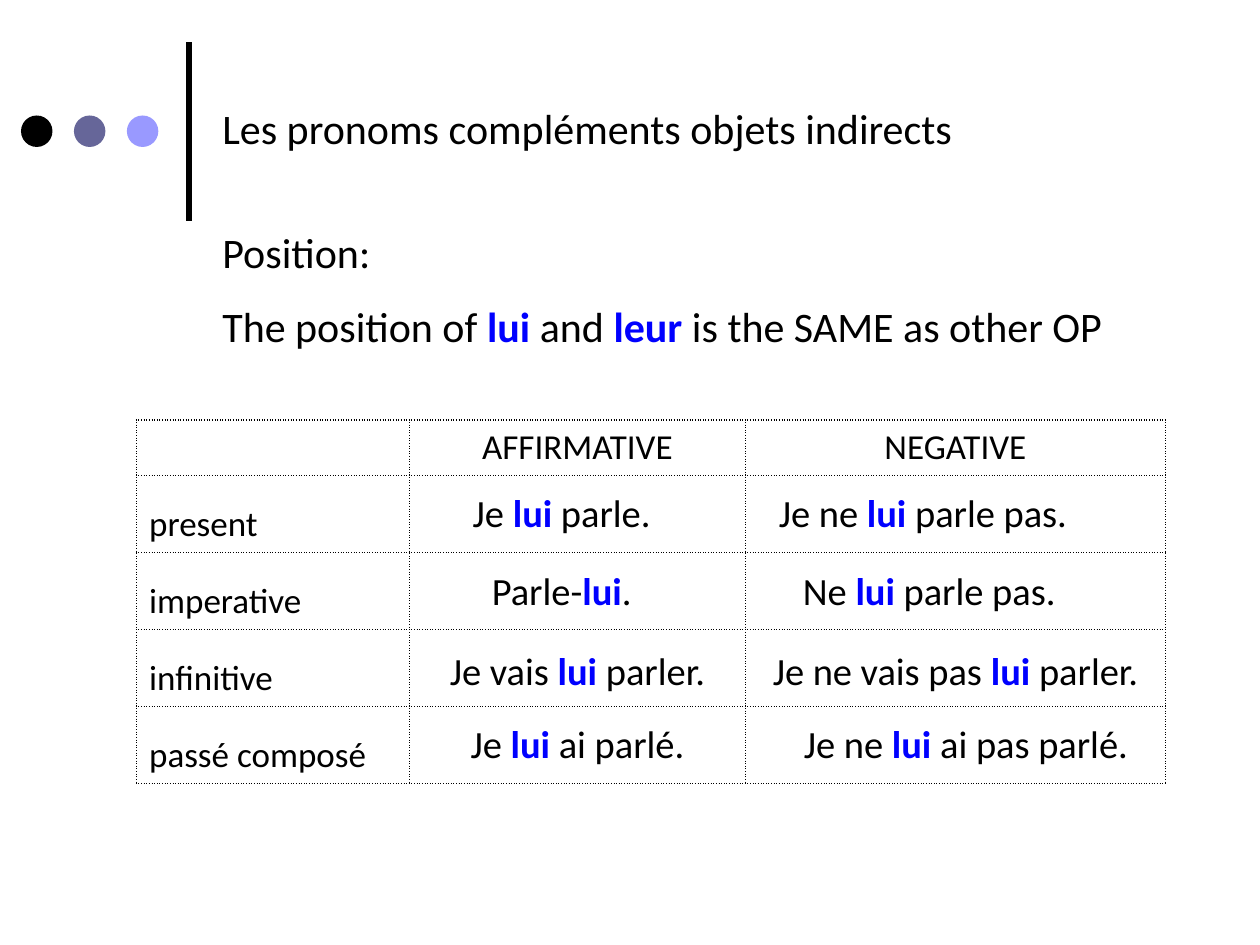
from pptx import Presentation
from pptx.util import Inches, Pt
from pptx.dml.color import RGBColor
from pptx.enum.shapes import MSO_SHAPE as Shape, MSO_CONNECTOR as Line
from pptx.enum.text import PP_ALIGN as Align, MSO_AUTO_SIZE as Fit
from pptx.oxml import parse_xml
from pptx.oxml.ns import nsdecls

BLACK = RGBColor(0x00, 0x00, 0x00)
BLUE = RGBColor(0x00, 0x00, 0xFF)
SLATE = RGBColor(0x66, 0x66, 0x99)
LILAC = RGBColor(0x99, 0x99, 0xFF)

deck = Presentation()
deck.slide_width, deck.slide_height = Inches(10), Inches(7.5)
slide = deck.slides.add_slide(deck.slide_layouts[6])
shapes = slide.shapes
UNIT = deck.slide_width / 120  # the grid has 120 columns and 90 rows


def grid(*counts):
    return [int(n * UNIT) for n in counts]


def write(para, text, size):
    """Add runs to para; every second piece between bars is bold blue."""
    for i, piece in enumerate(text.split("|")):
        run = para.add_run()
        run.text = piece
        font = run.font
        font.name, font.size = "Calibri", Pt(size)
        font.bold = i % 2 == 1
        font.color.rgb = BLUE if i % 2 else BLACK


# Rule and dots beside the title
rule = shapes.add_connector(Line.STRAIGHT, *grid(18, 21, 18, 4))
rule.line.color.rgb, rule.line.width = BLACK, Pt(3)
rule._element.spPr.append(parse_xml(f"<a:effectLst {nsdecls('a')}/>"))

for i, color in enumerate([BLACK, SLATE, LILAC]):
    dot = shapes.add_shape(Shape.OVAL, *grid(2 + 5.04 * i, 11, 3, 3))
    dot.shadow.inherit = False
    dot.fill.solid()
    dot.fill.fore_color.rgb = color
    dot.line.fill.background()

# Table with dotted borders
COLS = [26, 32, 40]
ROWS = [5.2] + [7.2] * 4
HEADS = ["", "AFFIRMATIVE", "NEGATIVE"]
TENSES = ["present", "imperative", "infinitive", "passé composé"]

table = shapes.add_table(len(ROWS), len(COLS),
                         *grid(13, 40, sum(COLS), sum(ROWS))).table
table.first_row = table.horz_banding = False
for col, width in zip(table.columns, grid(*COLS)):
    col.width = width
for row, height in zip(table.rows, grid(*ROWS)):
    row.height = height

for cell in table.iter_cells():
    props = cell._tc.get_or_add_tcPr()
    for side in ("lnL", "lnR", "lnT", "lnB"):
        props.append(parse_xml(
            f'<a:{side} {nsdecls("a")} w="12700"><a:solidFill>'
            f'<a:srgbClr val="{BLACK}"/></a:solidFill>'
            f'<a:prstDash val="sysDot"/></a:{side}>'))
    cell.fill.background()

for c, head in enumerate(HEADS):
    if head:
        para = table.cell(0, c).text_frame.paragraphs[0]
        para.alignment = Align.CENTER
        write(para, head, 20)
for r, tense in enumerate(TENSES, 1):
    para = table.cell(r, 0).text_frame.paragraphs[0]
    para.line_spacing = 1.5
    write(para, tense, 20)

# Text boxes: left, top, width, height, size, space around, alignment, text
LEFT, MID = Align.LEFT, Align.CENTER
HIGH = 5.6
TOPS = [46, 53.4, 61, 68]
BOXES = [
    (20, 9.2, 90, 6, 24, 0, LEFT, "Les pronoms compléments objets indirects"),
    (20, 21, 38, 6, 24, 0, LEFT, "Position:"),
    (20, 28, 90, 6, 24, 12, LEFT,
     "The position of |lui |and |leur| is the SAME as other OP"),
    (42, TOPS[0], 23, HIGH, 22, 12, MID, "Je |lui |parle."),
    (73, TOPS[0], 31, HIGH, 22, 12, LEFT, "Je ne |lui |parle pas."),
    (42, TOPS[1], 23, HIGH, 22, 12, MID, "Parle-|lui|."),
    (73, TOPS[1], 31, HIGH, 22, 12, MID, "Ne |lui |parle pas."),
    (40, TOPS[2], 30, HIGH, 22, 12, MID, "Je vais |lui |parler."),
    (72, TOPS[2], 38, HIGH, 22, 12, MID, "Je ne vais pas |lui |parler."),
    (40, TOPS[3], 30, HIGH, 22, 12, MID, "Je |lui |ai parlé."),
    (74, TOPS[3], 36, HIGH, 22, 12, MID, "Je ne |lui |ai pas parlé."),
]
for left, top, width, height, size, gap, align, text in BOXES:
    frame = shapes.add_textbox(*grid(left, top, width, height)).text_frame
    frame.word_wrap = True
    frame.auto_size = Fit.SHAPE_TO_FIT_TEXT
    para = frame.paragraphs[0]
    para.alignment = align
    para.space_before = para.space_after = Pt(gap)
    write(para, text, size)

deck.save("out.pptx")
